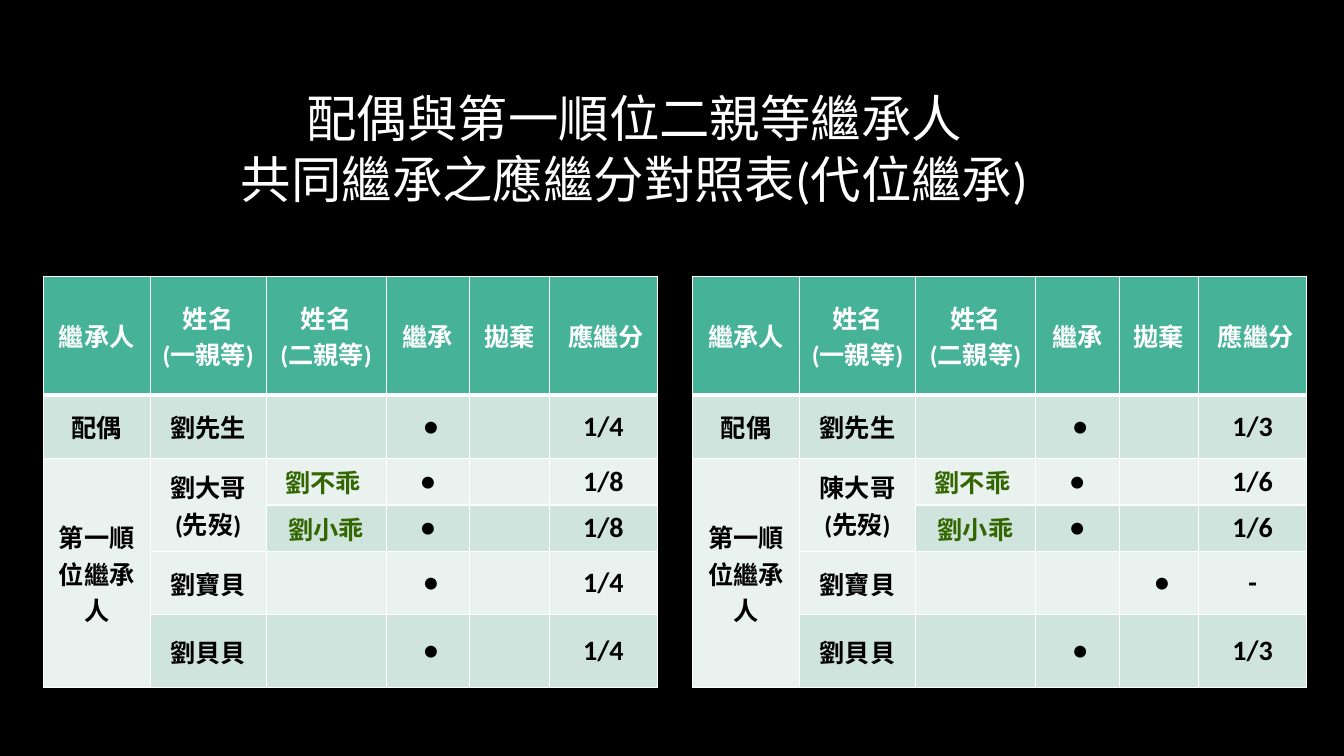
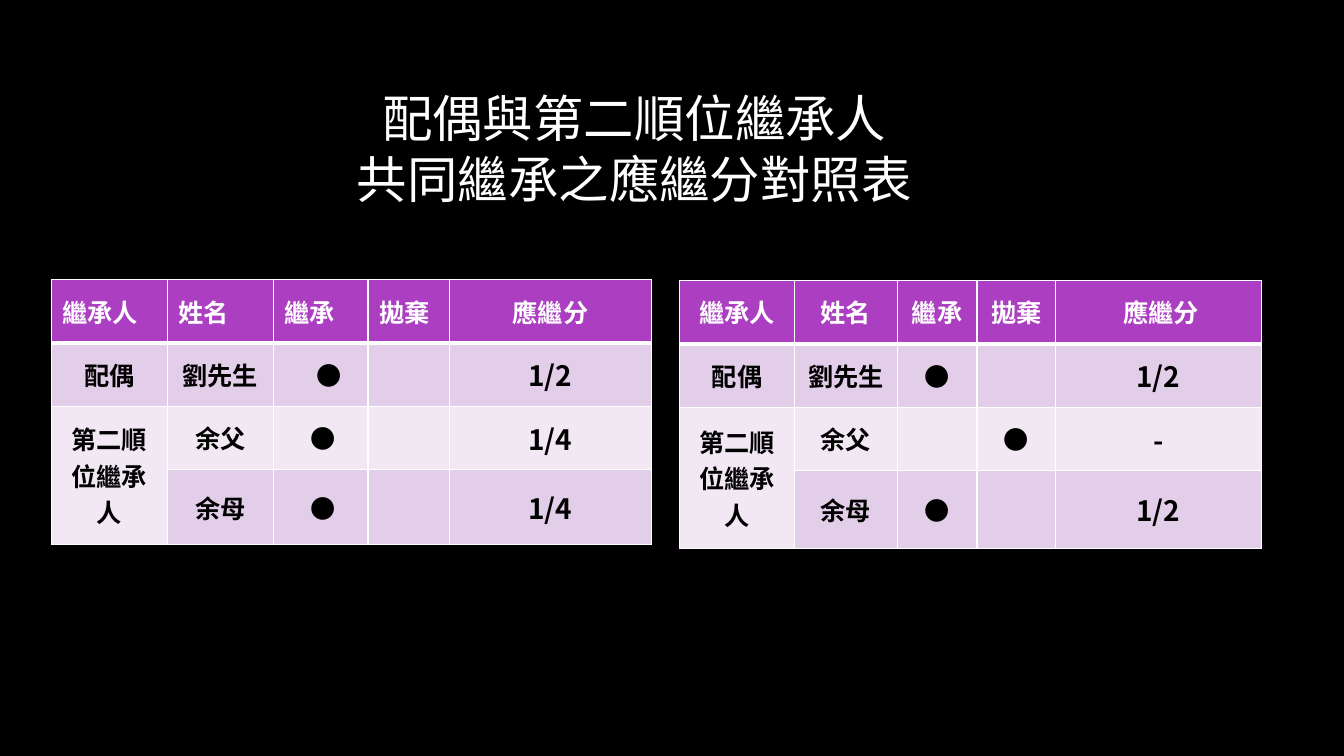
from lxml import etree
from pptx import Presentation
from pptx import util as u
from pptx.dml.color import RGBColor
from pptx.enum import text
from pptx.oxml.ns import qn

WIDTH, HEIGHT = 13.33, 7.5
BLACK = RGBColor(0x00, 0x00, 0x00)
WHITE = RGBColor(0xFF, 0xFF, 0xFF)
LEAF = RGBColor(0x33, 0x66, 0x00)
# Each palette holds the header fill, then the two alternating row fills.
GREEN = (RGBColor(0x46, 0xB2, 0x98), RGBColor(0xCF, 0xE4, 0xDD), RGBColor(0xE9, 0xF2, 0xEF))
PURPLE = (RGBColor(0xAC, 0x3E, 0xC1), RGBColor(0xE3, 0xCE, 0xE9), RGBColor(0xF1, 0xE8, 0xF4))
LATIN, HAN = "Calibri", "Noto Sans CJK TC"
CENTER, LEFT = text.PP_ALIGN.CENTER, text.PP_ALIGN.LEFT
SIDE_MARGIN = 0.11
DOT = "●"


def write(para, words, *, size=18, color=BLACK, bold=False, font=LATIN, align=CENTER):
    """Fill a paragraph; each newline in the words becomes a line break."""
    para.alignment = align
    for number, line in enumerate(words.split("\n")):
        if number:
            para.add_line_break()
        span = para.add_run()
        span.text = line
        span.font.size = u.Pt(size)
        span.font.bold = bold
        span.font.name = font
        span.font.color.rgb = color
        east_asian = etree.Element(qn("a:ea"), typeface=HAN)
        span.font._element.find(qn("a:latin")).addnext(east_asian)


def add_title(page, words):
    box = page.shapes.add_textbox(u.Inches(0.75), u.Inches(0.67), u.Inches(11.08), u.Inches(1.59))
    frame = box.text_frame
    frame.word_wrap = True
    frame.vertical_anchor = text.MSO_ANCHOR.MIDDLE
    para = frame.paragraphs[0]
    para.line_spacing = 1.0
    write(para, words, size=36, color=WHITE)


def set_borders(cell, *, top=1, bottom=1):
    """Draw white borders, with widths in points."""
    properties = cell._tc.get_or_add_tcPr()
    widths = {"lnL": 1, "lnR": 1, "lnT": top, "lnB": bottom}
    for place, (tag, width) in enumerate(widths.items()):
        line = etree.Element(qn(f"a:{tag}"), w=str(u.Pt(width)))
        fill = etree.SubElement(line, qn("a:solidFill"))
        etree.SubElement(fill, qn("a:srgbClr"), val=str(WHITE))
        properties.insert(place, line)


def fill_cell(cell, lines, *, fill, nudge=0, **style):
    """Write one paragraph per line; a nudge widens the left (or, if negative, right) margin."""
    cell.fill.solid()
    cell.fill.fore_color.rgb = fill
    cell.vertical_anchor = text.MSO_ANCHOR.MIDDLE
    cell.margin_left = u.Inches(SIDE_MARGIN + max(nudge, 0))
    cell.margin_right = u.Inches(SIDE_MARGIN + max(-nudge, 0))
    frame = cell.text_frame
    for number, line in enumerate(lines.split("\n") if lines else []):
        para = frame.add_paragraph() if number else frame.paragraphs[0]
        write(para, line, bold=True, **style)


def add_share_table(page, left, top, columns, heights, rows, *, palette, merges,
                    font=LATIN, nudges=None, header_left=0, leaf_column=None):
    """Draw a table of heirs; header_left counts the leading header cells set flush left."""
    nudges = nudges or {}
    frame = page.shapes.add_table(len(rows), len(columns), u.Inches(left), u.Inches(top),
                                  u.Inches(sum(columns)), u.Inches(sum(heights)))
    table = frame.table
    for column, width in zip(table.columns, columns):
        column.width = u.Inches(width)
    for row, height in zip(table.rows, heights):
        row.height = u.Inches(height)
    header, *bands = palette
    last = len(columns) - 1
    for r, words in enumerate(rows):
        for c, lines in enumerate(words):
            cell = table.cell(r, c)
            if r == 0:
                color = WHITE
            else:
                color = LEAF if c == leaf_column else BLACK
            fill_cell(cell, lines, fill=bands[(r - 1) % 2] if r else header,
                      nudge=nudges.get((r, c), 0), font=font, color=color,
                      size=20 if r and c == last else 18,
                      align=LEFT if r == 0 and c < header_left else CENTER)
            set_borders(cell, top=3 if r == 1 else 1, bottom=1 if r else 3)
    for first, final, c in merges:
        table.cell(first, c).merge(table.cell(final, c))


def add_first_rank_table(page, left, brother, choices):
    """Choices give, for each heir, whether they inherit and their share."""
    people = [("配偶", "劉先生", ""), ("第一順位繼承人", f"{brother}\n(先歿)", "劉不乖"),
              ("", "", "劉小乖"), ("", "劉寶貝", ""), ("", "劉貝貝", "")]
    rows = [("繼承人", "姓名\n(一親等)", "姓名\n(二親等)", "繼承", "拋棄", "應繼分")]
    rows += [(*person, *marks(*choice)) for person, choice in zip(people, choices)]
    nudges = {(0, 5): 0.06, (2, 2): -0.06}
    nudges.update({(r, c): 0.06 for r in (1, 4, 5) for c in (3, 4)})
    add_share_table(page, left, 2.74, [1.06, 1.15, 1.19, 0.83, 0.79, 1.07],
                    [1.18, 0.63, 0.46, 0.46, 0.63, 0.72], rows, palette=GREEN,
                    merges=[(2, 5, 0), (2, 3, 1)], nudges=nudges, leaf_column=2)


def add_second_rank_table(page, left, top, columns, heights, choices, **options):
    people = [("配偶", "劉先生"), ("第二順位繼承人", "余父"), ("", "余母")]
    rows = [("繼承人", "姓名", "繼承", "拋棄", "應繼分")]
    rows += [(*person, *marks(*choice)) for person, choice in zip(people, choices)]
    add_share_table(page, left, top, columns, heights, rows, palette=PURPLE,
                    merges=[(2, 3, 0)], font=HAN, **options)


def marks(inherits, share):
    """Return the inherit, renounce and share cells of a row."""
    return (DOT, "", share) if inherits else ("", DOT, share)


def add_page(deck, title):
    page = deck.slides.add_slide(deck.slide_layouts[6])
    page.background.fill.solid()
    page.background.fill.fore_color.rgb = BLACK
    add_title(page, title)
    return page


def add_first_rank_page(deck):
    page = add_page(deck, "配偶與第一順位二親等繼承人\n共同繼承之應繼分對照表(代位繼承)")
    add_first_rank_table(page, 0.43, "劉大哥", [
        (True, "1/4"), (True, "1/8"), (True, "1/8"), (True, "1/4"), (True, "1/4")])
    add_first_rank_table(page, 6.87, "陳大哥", [
        (True, "1/3"), (True, "1/6"), (True, "1/6"), (False, "-"), (True, "1/3")])


def add_second_rank_page(deck):
    page = add_page(deck, "配偶與第二順位繼承人\n共同繼承之應繼分對照表")
    add_second_rank_table(page, 0.51, 2.77, [1.15, 1.05, 0.94, 0.81, 2], [0.63, 0.63, 0.63, 0.74],
                          [(True, "1/2"), (True, "1/4"), (True, "1/4")], header_left=4,
                          nudges={(1, 2): 0.16, (2, 2): 0.05, (3, 2): 0.05})
    add_second_rank_table(page, 6.74, 2.78, [1.14, 1.02, 0.79, 0.78, 2.04], [0.63, 0.63, 0.63, 0.77],
                          [(True, "1/2"), (False, "-"), (True, "1/2")], nudges={(0, 4): 0.05})


def main():
    deck = Presentation()
    deck.slide_width, deck.slide_height = u.Inches(WIDTH), u.Inches(HEIGHT)
    add_first_rank_page(deck)
    add_second_rank_page(deck)
    deck.save("out.pptx")


if __name__ == "__main__":
    main()
